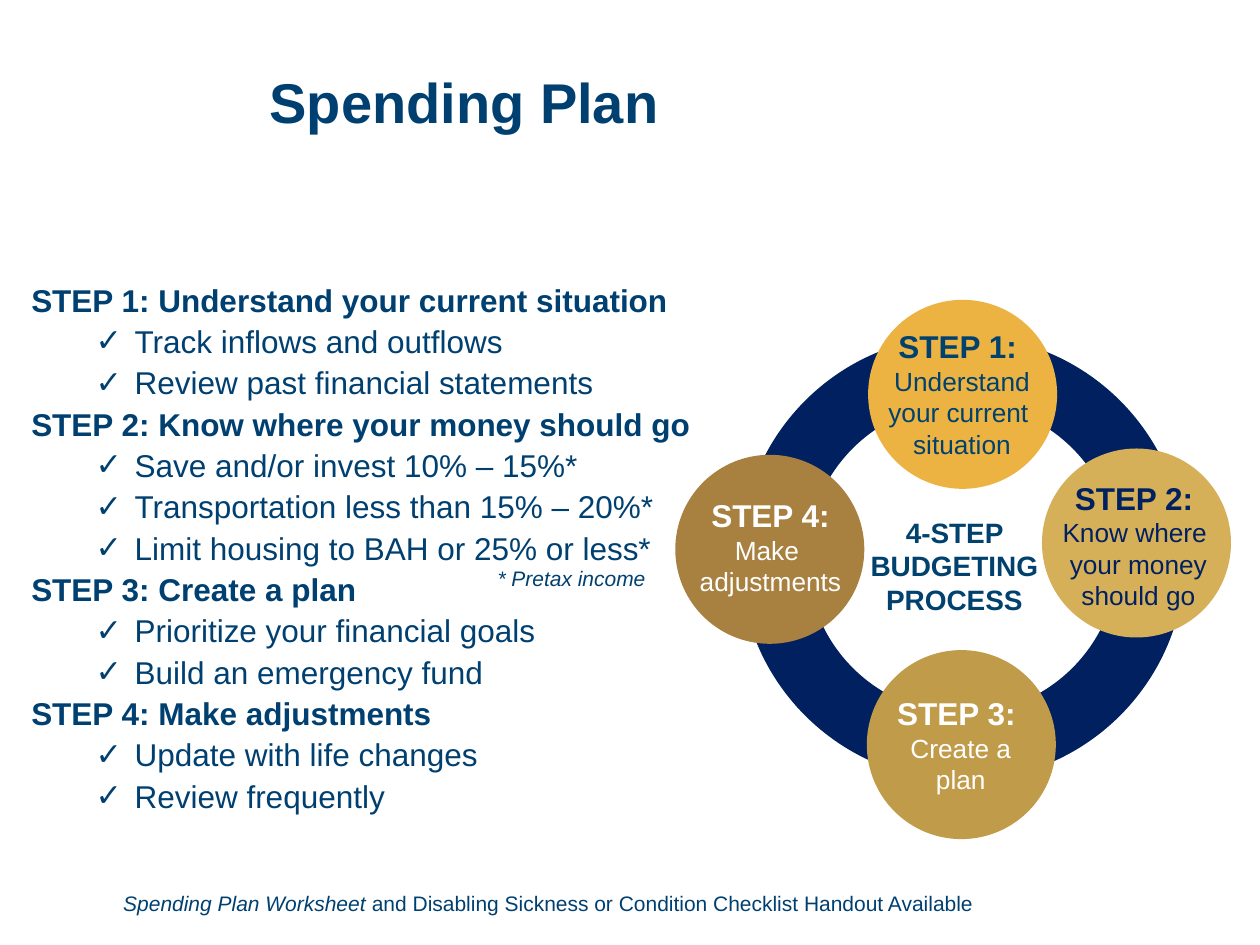
from dataclasses import dataclass

from lxml import etree
from pptx import Presentation
from pptx import util as u
from pptx.dml.color import RGBColor
from pptx.enum import shapes, text
from pptx.oxml import ns

PX = 9144


@dataclass(frozen=True)
class Theme:
    font: str = "Arial"
    ink: str = "004071"
    label: str = "01416E"
    navy: str = "002060"
    white: str = "FFFFFF"
    amber: str = "ECB342"
    sand: str = "D6B059"
    ochre: str = "C09B49"
    bronze: str = "A88140"
    title: int = 32
    body: int = 18
    hub: int = 16
    detail: int = 15
    note: int = 12
    gap: int = 2


class SlideBuilder:
    def __init__(self, slide, theme):
        self.slide = slide
        self.theme = theme

    def run(self, paragraph, words, size, color, bold=False, italic=False):
        run = paragraph.add_run()
        run.text = words
        font = run.font
        font.name, font.size = self.theme.font, u.Pt(size)
        font.bold, font.italic = bold, italic
        font.color.rgb = RGBColor.from_string(color)

    def title(self, box, words):
        shape = self.slide.shapes.title
        shape.left, shape.top, shape.width, shape.height = (n * PX for n in box)
        frame = shape.text_frame
        frame.vertical_anchor = text.MSO_ANCHOR.MIDDLE
        paragraph = frame.paragraphs[0]
        paragraph.alignment = text.PP_ALIGN.LEFT
        paragraph.line_spacing = 0.9
        self.run(paragraph, words, self.theme.title, self.theme.ink, bold=True)

    def text_frame(self, box, grow=False):
        shape = self.slide.shapes.add_textbox(*(n * PX for n in box))
        frame = shape.text_frame
        frame.word_wrap = True
        if grow:
            frame.auto_size = text.MSO_AUTO_SIZE.SHAPE_TO_FIT_TEXT
        return frame

    def paragraph(self, frame, first):
        return frame.paragraphs[0] if first else frame.add_paragraph()

    def indent(self, paragraph, left, hanging=0, bullet=None):
        properties = paragraph._p.get_or_add_pPr()
        properties.set("marL", str(left * PX))
        properties.set("indent", str(-hanging * PX))
        if bullet:
            etree.SubElement(properties, ns.qn("a:buFont")).set("typeface", self.theme.font)
            etree.SubElement(properties, ns.qn("a:buChar")).set("char", bullet)

    def outline(self, box, steps):
        theme = self.theme
        frame = self.text_frame(box)
        for number, (heading, items) in enumerate(steps, 1):
            paragraph = self.paragraph(frame, number == 1)
            self.indent(paragraph, 1)
            if number > 1:
                paragraph.space_before = u.Pt(theme.gap)
            self.run(paragraph, f"STEP {number}: {heading}", theme.body, theme.ink, bold=True)
            for item in items:
                paragraph = frame.add_paragraph()
                paragraph.level = 1
                self.indent(paragraph, 83, 31, "✓")
                paragraph.space_before = u.Pt(theme.gap)
                self.run(paragraph, item, theme.body, theme.ink)

    def note(self, box, runs, left=0):
        paragraph = self.text_frame(box).paragraphs[0]
        self.indent(paragraph, left)
        for words, italic in runs:
            self.run(paragraph, words, self.theme.note, self.theme.ink, italic=italic)

    def circle(self, left, top, diameter, fill=None, line=None, line_width=0):
        shape = self.slide.shapes.add_shape(
            shapes.MSO_SHAPE.OVAL, left * PX, top * PX, diameter * PX, diameter * PX)
        shape.shadow.inherit = False
        if fill:
            shape.fill.solid()
            shape.fill.fore_color.rgb = RGBColor.from_string(fill)
        else:
            shape.fill.background()
        if line:
            shape.line.color.rgb = RGBColor.from_string(line)
            shape.line.width = u.Pt(line_width)
        else:
            shape.line.fill.background()

    def label(self, box, lines, color):
        frame = self.text_frame(box, grow=True)
        for index, (words, size, bold) in enumerate(lines):
            paragraph = self.paragraph(frame, index == 0)
            paragraph.alignment = text.PP_ALIGN.CENTER
            self.run(paragraph, words, size, color, bold)

    def step_label(self, box, heading, details, color):
        lines = [(heading, self.theme.body, True)]
        lines += [(words, self.theme.detail, False) for words in details]
        self.label(box, lines, color)


def main():
    theme = Theme()
    presentation = Presentation()
    presentation.slide_width, presentation.slide_height = 1000 * PX, 750 * PX
    slide = presentation.slides.add_slide(presentation.slide_layouts[5])
    builder = SlideBuilder(slide, theme)

    builder.title((204, 11, 726, 145), "Spending Plan")
    builder.outline((14, 218, 626, 470), [
        ("Understand your current situation",
         ["Track inflows and outflows", "Review past financial statements"]),
        ("Know where your money should go",
         ["Save and/or invest 10% – 15%*", "Transportation less than 15% – 20%*",
          "Limit housing to BAH or 25% or less*"]),
        ("Create a plan",
         ["Prioritize your financial goals", "Build an emergency fund"]),
        ("Make adjustments",
         ["Update with life changes", "Review frequently"]),
    ])
    builder.note((334, 444, 212, 37), [("* Pretax income", True)], left=51)

    builder.circle(614, 293, 300, line=theme.navy, line_width=38.5)
    for left, top, fill in [(689, 238, theme.amber), (827, 356, theme.sand),
                            (688, 516, theme.ochre), (536, 361, theme.bronze)]:
        builder.circle(left, top, 150, fill=fill)

    builder.label((666, 404, 183, 91),
                  [(words, theme.hub, True) for words in ("4-STEP BUDGETING", "PROCESS")],
                  theme.label)
    for box, heading, details, color in [
        ((691, 255, 145, 116), "STEP 1: ",
         ["Understand your current ", "situation"], theme.label),
        ((831, 375, 145, 120), "STEP 2: ",
         ["Know where ", "your money", "should go"], theme.navy),
        ((692, 546, 141, 92), "STEP 3: ", ["Create a plan"], theme.white),
        ((539, 389, 145, 92), "STEP 4:", ["Make ", "adjustments"], theme.white),
    ]:
        builder.step_label(box, heading, details, color)

    builder.note((88, 702, 716, 30), [
        ("Spending Plan Worksheet ", True),
        ("and Disabling Sickness or Condition Checklist Handout Available", False),
    ])
    presentation.save("out.pptx")


if __name__ == "__main__":
    main()
